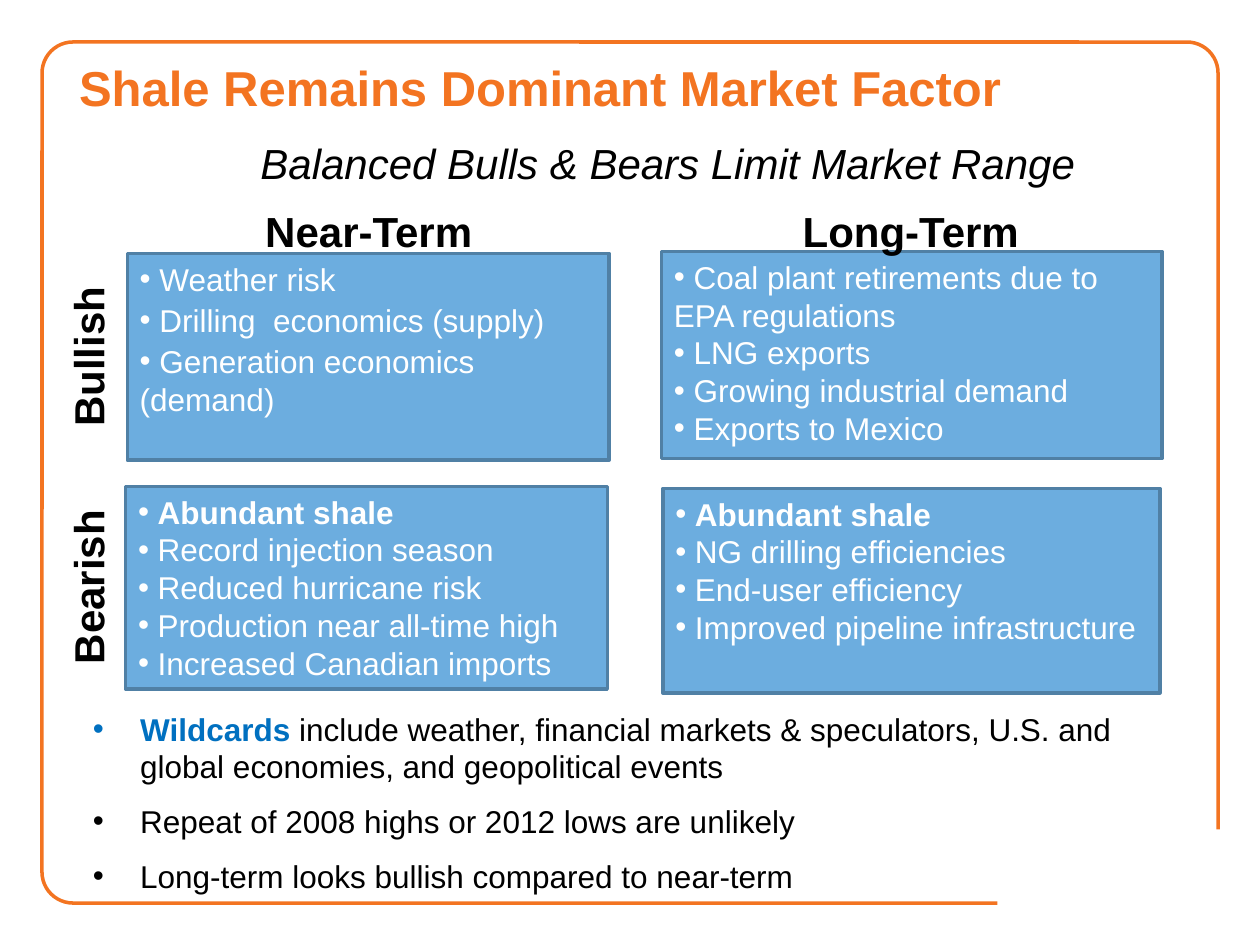
from lxml import etree
from pptx import Presentation
from pptx.dml.color import RGBColor
from pptx.enum.shapes import MSO_SHAPE
from pptx.enum.text import MSO_ANCHOR, PP_ALIGN
from pptx.oxml.ns import qn
from pptx.util import Pt

ORANGE = RGBColor(0xF3, 0x74, 0x21)
BLUE = RGBColor(0x6C, 0xAD, 0xDF)
DARK_BLUE = RGBColor(0x50, 0x80, 0xA5)
ACCENT = RGBColor(0x00, 0x70, 0xC0)
WHITE = RGBColor(0xFF, 0xFF, 0xFF)
BLACK = RGBColor(0x00, 0x00, 0x00)
RECTANGLE, ROUNDED = MSO_SHAPE.RECTANGLE, MSO_SHAPE.ROUNDED_RECTANGLE
TOP, MIDDLE = MSO_ANCHOR.TOP, MSO_ANCHOR.MIDDLE
LEFT, CENTER = PP_ALIGN.LEFT, PP_ALIGN.CENTER


def write(box, lines, size=18, color=BLACK, bold=False, italic=False,
          align=LEFT, anchor=TOP, bullet=False, indent=0, gap=0):
    """Fill a box; each line is a list of (text, font overrides) spans."""
    frame = box.text_frame
    frame.word_wrap = True
    frame.vertical_anchor = anchor
    for index, spans in enumerate(lines):
        para = frame.add_paragraph() if index else frame.paragraphs[0]
        para.alignment = align
        para.space_before = Pt(gap if index else 0)
        if bullet:
            properties = para._p.get_or_add_pPr()
            properties.set("marL", str(Pt(indent)))
            properties.set("indent", str(-Pt(indent)))
            font = etree.SubElement(properties, qn("a:buFont"))
            font.set("typeface", "Arial")
            etree.SubElement(properties, qn("a:buChar")).set("char", "•")
        for text, changes in spans:
            span = para.add_run()
            span.text = text
            span.font.name = "Arial"
            span.font.size = Pt(size)
            span.font.bold = changes.get("bold", bold)
            span.font.italic = italic
            span.font.color.rgb = changes.get("color", color)


deck = Presentation()
deck.slide_width, deck.slide_height = Pt(720), Pt(540)
page = deck.slides.add_slide(deck.slide_layouts[5])

# Rounded frame, with its lower right corner covered
frame_line = page.shapes.add_shape(ROUNDED, Pt(24), Pt(24), Pt(672), Pt(492))
frame_line.adjustments[0] = 0.036
frame_line.fill.background()
frame_line.line.color.rgb = ORANGE
frame_line.line.width = Pt(2)
frame_line.shadow.inherit = False

corner = page.shapes.add_shape(RECTANGLE, Pt(570), Pt(474), Pt(150), Pt(66))
corner.fill.solid()
corner.fill.fore_color.rgb = WHITE
corner.line.fill.background()
corner.shadow.inherit = False

# Title
title = page.shapes.title
title.left, title.top, title.width, title.height = Pt(38), Pt(26.6), Pt(652), Pt(46)
write(title, [[("Shale Remains Dominant Market Factor", {})]],
      size=28, color=ORANGE, bold=True, anchor=MIDDLE)

# Four panels: position, space between lines, lines, first line bold
panels = [
    ((72.8, 144.8, 275.3, 118.2), 2, False,
     ["Weather risk", "Drilling  economics (supply)",
      "Generation economics (demand)"]),
    ((378, 143.8, 286, 118.2), 0, False,
     ["Coal plant retirements due to EPA regulations", "LNG exports",
      "Growing industrial demand", "Exports to Mexico"]),
    ((71.8, 278, 275.3, 115.8), 0, True,
     ["Abundant shale", "Record injection season", "Reduced hurricane risk",
      "Production near all-time high", "Increased Canadian imports"]),
    ((378.8, 279.1, 284, 116.9), 0, True,
     ["Abundant shale", "NG drilling efficiencies", "End-user efficiency",
      "Improved pipeline infrastructure"]),
]
for place, gap, bold_first, points in panels:
    panel = page.shapes.add_shape(RECTANGLE, *map(Pt, place))
    panel.fill.solid()
    panel.fill.fore_color.rgb = BLUE
    panel.line.color.rgb = DARK_BLUE
    panel.line.width = Pt(2)
    panel.shadow.inherit = False
    lines = [[(" ", {}), (point, {"bold": bold_first and index == 0})]
             for index, point in enumerate(points)]
    write(panel, lines, color=WHITE, bullet=True, gap=gap)

# Closing points
closing = page.shapes.add_textbox(Pt(46), Pt(399.6), Pt(624), Pt(117.4))
write(closing, [
    [("Wildcards ", {"bold": True, "color": ACCENT}),
     ("include weather, financial markets & speculators, U.S. and "
      "global economies, and geopolitical events", {})],
    [("Repeat of 2008 highs or 2012 lows are unlikely", {})],
    [("Long-term looks bullish compared to near-term", {})],
], anchor=MIDDLE, bullet=True, indent=27, gap=9.6)

# Row and column headings, and the subtitle
headings = [
    ("Bullish", (-7.9, 185.8, 116, 36), 270, {"bold": True}),
    ("Long-Term", (378, 113.8, 285, 36), 0, {"bold": True}),
    ("Bearish", (-8.6, 317.5, 117.4, 36), 270, {"bold": True}),
    ("Near-Term", (72.8, 113.8, 275.8, 36), 0, {"bold": True}),
    ("Balanced Bulls & Bears Limit Market Range",
     (107.3, 74.9, 548.6, 36), 0, {"italic": True}),
]
for text, place, rotation, style in headings:
    heading = page.shapes.add_textbox(*map(Pt, place))
    heading.rotation = rotation
    write(heading, [[(text, {})]], size=24, align=CENTER, **style)

deck.save("out.pptx")
